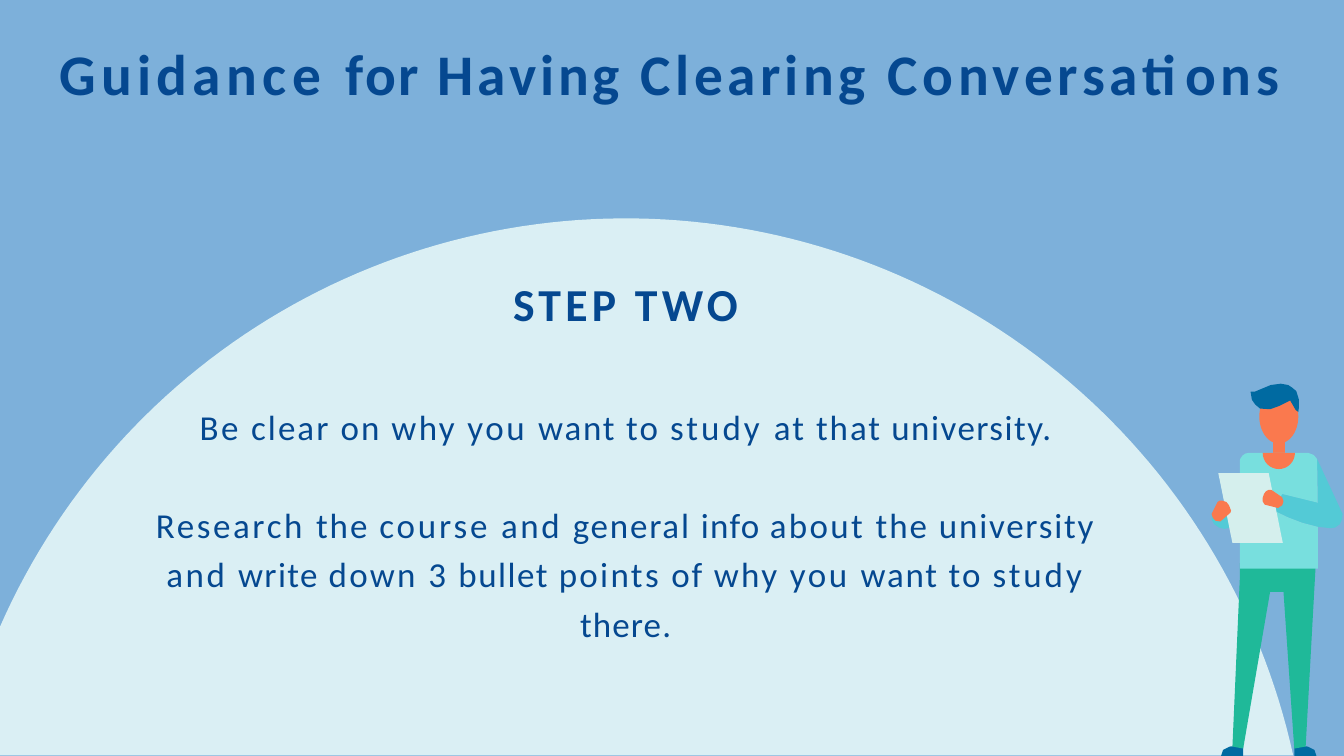
import math

import pptx
import pptx.dml.color
import pptx.enum.shapes
import pptx.enum.text
import pptx.util
from pptx.util import Inches


class Theme:
    font = "Calibri"
    title_size, step_size, body_size = 61.5, 49, 37.5
    sky, dome, navy = "7DB0DA", "DAEFF4", "054890"
    hair, skin, trousers = "006AA1", "FA794E", "1FB999"
    sleeve, shirt, paper = "53CAD6", "78DFDE", "D5EFED"


TITLE = [("Guidance ", 5.8), ("for ", 2.9), ("Having ", 4.1),
         ("Clearing ", 4.7), ("Conversations", 5)]
STEP = [("STEP TWO", 4.6)]
REASON = [("Be ", 2.5), ("clear ", 2.2), ("on ", 2.1), ("why ", 2.5),
          ("you ", 2.8), ("want ", 1.9), ("to ", 2.2), ("study ", 3.2),
          ("at ", 2.2), ("that", 2), (" university.", 1.6)]
RESEARCH = [("Research ", 2.8), ("the ", 2.1), ("course ", 3), ("and ", 2.7),
            ("general ", 1.9), ("info ", 1.4), ("about ", 2.5), ("the ", 2.1),
            ("university ", 1.9), ("and ", 2.7), ("write ", 1.5),
            ("down ", 2.5), ("3", 3.2), (" bullet ", 1.6), ("points ", 2.5),
            ("of ", 1.9), ("why ", 2.5), ("you ", 2.8), ("want ", 1.9),
            ("to ", 2.2), ("study ", 3.1), ("there.", 1.2)]


def rgb(color):
    return pptx.dml.color.RGBColor.from_string(color)


def paint(sp, color):
    sp.fill.solid()
    sp.fill.fore_color.rgb = rgb(color)
    sp.line.fill.background()
    sp.shadow.inherit = False


def arc(cx, cy, radius, start, end, steps):
    """Points on a circle; angles in radians, counter-clockwise from the right."""
    angles = [start + (end - start) * i / steps for i in range(steps + 1)]
    return [(cx + radius * math.cos(a), cy - radius * math.sin(a)) for a in angles]


def add_outline(shapes, box, color, *contours):
    """Draw closed contours whose points are inches from the box's corner."""
    left, top = box[:2]
    builder = None
    for contour in contours:
        points = [(Inches(left + x), Inches(top + y)) for x, y in contour]
        if builder is None:
            builder = shapes.build_freeform(*points[0], scale=1.0)
        else:
            builder.move_to(*points[0])
        builder.add_line_segments(points[1:], close=True)
    paint(builder.convert_to_shape(), color)


def set_frame(sp, box, inset_top):
    sp.left, sp.top, sp.width, sp.height = map(Inches, box)
    tf = sp.text_frame
    tf.word_wrap = True
    tf.auto_size = pptx.enum.text.MSO_AUTO_SIZE.NONE
    tf.vertical_anchor = pptx.enum.text.MSO_ANCHOR.TOP
    tf.margin_left = tf.margin_right = tf.margin_bottom = 0
    tf.margin_top = Inches(inset_top)
    return tf


def write_runs(p, runs, size, bold, align, before):
    p.alignment = align
    p.space_before = pptx.util.Pt(before)
    for text, spacing in runs:
        r = p.add_run()
        r.text = text
        r.font.name = Theme.font
        r.font.size = pptx.util.Pt(size)
        r.font.bold = bold
        r.font.color.rgb = rgb(Theme.navy)
        # Letter spacing is in hundredths of a point
        r.font._element.set("spc", str(round(spacing * 100)))


def add_title(slide, box):
    tf = set_frame(slide.shapes.title, box, 0.31)
    write_runs(tf.paragraphs[0], TITLE, Theme.title_size, True,
               pptx.enum.text.PP_ALIGN.LEFT, 1)


def add_dome(slide, box):
    """Top of a large circle, cut by the left and bottom edges of the box."""
    height, radius, peak = box[3], 10.17, 9.31
    start = math.pi - math.acos(peak / radius)
    end = math.asin((radius - height) / radius)
    curve = arc(peak, radius, radius, start, end, 120)
    add_outline(slide.shapes, box, Theme.dome, curve + [(0, height)])


def add_step(slide, box):
    tf = set_frame(slide.shapes.add_textbox(0, 0, 0, 0), box, 0.01)
    center = pptx.enum.text.PP_ALIGN.CENTER
    write_runs(tf.paragraphs[0], STEP, Theme.step_size, True, center, 1)
    write_runs(tf.add_paragraph(), REASON, Theme.body_size, False, center, 80)
    p = tf.add_paragraph()
    p.line_spacing = 1.17
    write_runs(p, RESEARCH, Theme.body_size, False, center, 52.5)


def add_student(slide, box):
    shapes = slide.shapes.add_group_shape().shapes
    left, top = box[:2]

    def outline(color, *contours):
        add_outline(shapes, box, color, *contours)

    # Shoes
    outline(Theme.hair,
            [(0.5, 5.39), (0.3, 5.41), (0.2, 5.46), (0.17, 5.55), (0.5, 5.55)],
            [(1.26, 5.39), (1.46, 5.41), (1.56, 5.46), (1.59, 5.55), (1.26, 5.55)])
    # Neck
    outline(Theme.skin, [(0.94, 0.8), (1.12, 0.8), (1.12, 1.04), (0.94, 1.04)])
    # Trousers
    outline(Theme.trousers,
            [(0.5, 5.44), (0.34, 5.41), (0.45, 2.91), (0.45, 2.68), (1.58, 2.68),
             (1.43, 5.41), (1.26, 5.44), (1.1, 3.11), (0.9, 3.11)])
    # Bent arm
    outline(Theme.sleeve,
            [(1.8, 2.16), (1.61, 2.14), (1.38, 2.08), (1.17, 2), (0.96, 1.9),
             (1.08, 1.65), (1.61, 1.78), (1.6, 1.13), (1.98, 1.95),
             (1.97, 2.03), (1.94, 2.1), (1.87, 2.15)])
    # Shirt
    outline(Theme.shirt,
            [(1.61, 2.76), (0.45, 2.76), (0.45, 1.16), (0.46, 1.12), (0.49, 1.08),
             (0.53, 1.05), (0.58, 1.04), (1.47, 1.04), (1.55, 1.07), (1.6, 1.13),
             (1.61, 1.78), (1.08, 1.65), (0.96, 1.9), (1.17, 2), (1.38, 2.08),
             (1.61, 2.14)])
    # Head
    head = shapes.add_shape(pptx.enum.shapes.MSO_SHAPE.OVAL, Inches(left + 0.74),
                            Inches(top + 0.1), Inches(0.58), Inches(0.8))
    paint(head, Theme.skin)
    # Far cuff
    outline(Theme.sleeve,
            [(0.22, 2.17), (0.14, 2.15), (0.07, 2.1), (0.03, 2.03), (0.03, 1.95),
             (0.46, 1.72), (0.45, 2.12), (0.32, 2.15)])
    # Hair
    outline(Theme.hair,
            [(1.32, 0.43), (1.28, 0.4), (1.2, 0.26), (1.04, 0.34), (0.9, 0.39),
             (0.75, 0.38), (0.68, 0.32), (0.63, 0.25), (0.61, 0.13), (0.67, 0.13),
             (0.79, 0.08), (0.91, 0.03), (1.06, 0.01), (1.17, 0.03), (1.23, 0.07),
             (1.29, 0.12), (1.33, 0.25), (1.33, 0.36)])
    # Neckline
    outline(Theme.skin, arc(1.03, 1.04, 0.24, math.pi, 2 * math.pi, 16))
    # Sheet of paper
    outline(Theme.paper, [(0.13, 1.34), (0.88, 1.34), (1.09, 2.38), (0.34, 2.38)])
    # Hands
    outline(Theme.skin,
            [(0.32, 1.9), (0.29, 1.82), (0.25, 1.77), (0.19, 1.75), (0.15, 1.75),
             (0.12, 1.77), (0.03, 1.95), (0.05, 2.01), (0.09, 2.05), (0.16, 2.06),
             (0.31, 1.93)],
            [(1.1, 1.76), (1.08, 1.7), (0.92, 1.59), (0.88, 1.59), (0.84, 1.61),
             (0.81, 1.65), (0.79, 1.71), (0.79, 1.76), (0.82, 1.81), (1.02, 1.86),
             (1.08, 1.82)])


def main():
    prs = pptx.Presentation()
    prs.slide_width, prs.slide_height = Inches(20), Inches(11.25)
    slide = prs.slides.add_slide(prs.slide_layouts.get_by_name("Title Only"))
    slide.background.fill.solid()
    slide.background.fill.fore_color.rgb = rgb(Theme.sky)

    add_title(slide, (0.88, 0.25, 18.23, 2.46))
    add_dome(slide, (0, 3.25, 19.25, 7.99))
    add_student(slide, (18, 5.7, 2, 5.55))
    add_step(slide, (2.27, 4.1, 14.08, 5.5))
    prs.save("out.pptx")


if __name__ == "__main__":
    main()
